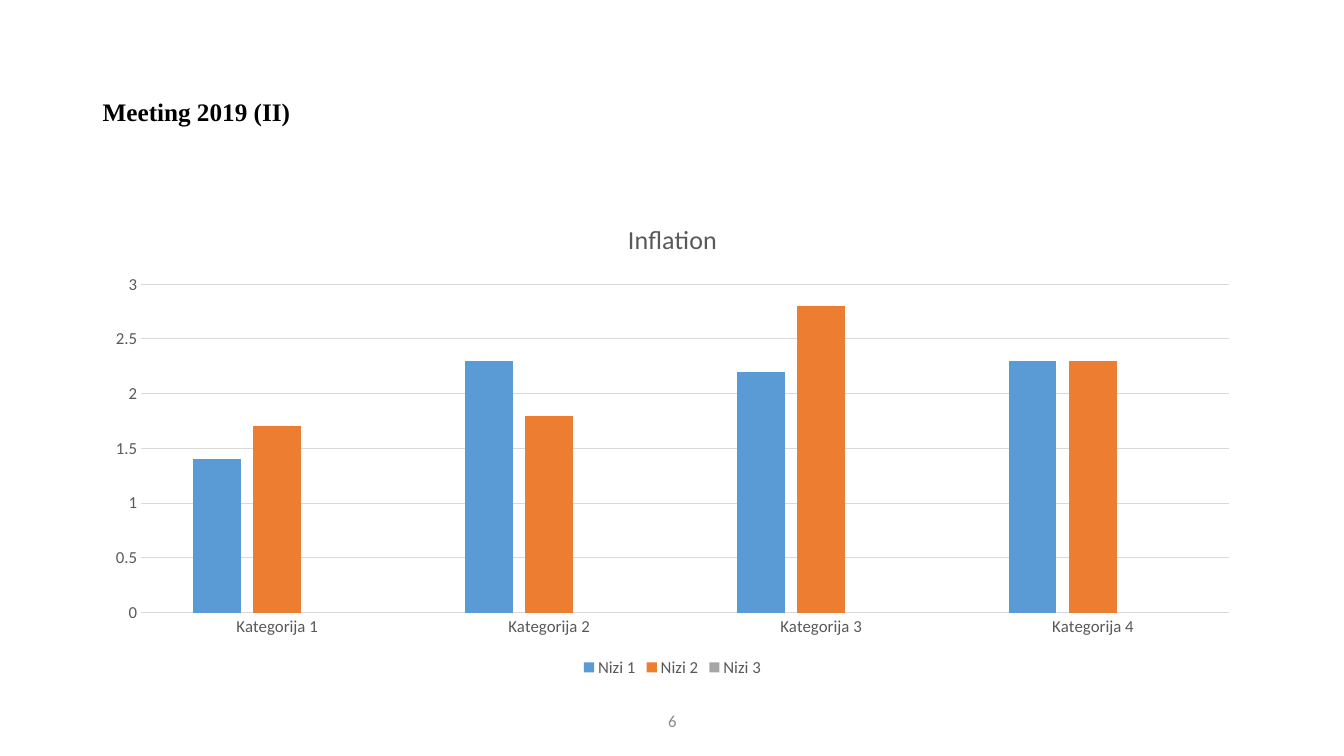
import dataclasses
import typing

import pptx
import pptx.chart.axis
import pptx.chart.data
import pptx.dml.color
import pptx.dml.line
import pptx.enum.chart
import pptx.enum.text
import pptx.slide
import pptx.text.text
import pptx.util

EMU_PER_PX = 9144
GREY = "595959"
RULE = "D9D9D9"


@dataclasses.dataclass(frozen=True)
class Label:
    text: str
    left: int
    top: int
    width: int
    height: int
    font: str
    size: int
    color: str
    bold: bool
    align: pptx.enum.text.PP_ALIGN
    line_spacing: float


@dataclasses.dataclass(frozen=True)
class Series:
    name: str
    values: tuple[typing.Optional[float], ...]
    color: str


LABELS = [
    Label("Meeting 2019 (II)", 92, 40, 1150, 145, "Times New Roman", 18,
          "000000", True, pptx.enum.text.PP_ALIGN.LEFT, 0.9),
    Label("6", 442, 695, 450, 40, "Calibri", 12,
          "8C8C8C", False, pptx.enum.text.PP_ALIGN.CENTER, 1.0),
]
CATEGORIES = [f"Kategorija {number}" for number in range(1, 5)]
SERIES = [
    Series("Nizi 1", (1.4, 2.3, 2.2, 2.3), "5B9BD5"),
    Series("Nizi 2", (1.7, 1.8, 2.8, 2.3), "ED7D31"),
    Series("Nizi 3", (None, None, None, None), "A5A5A5"),
]


def px(length: int) -> pptx.util.Emu:
    return pptx.util.Emu(length * EMU_PER_PX)


def rgb(color: str) -> pptx.dml.color.RGBColor:
    return pptx.dml.color.RGBColor.from_string(color)


def style_font(font: pptx.text.text.Font, name: str, size: float,
               color: str, bold: bool = False) -> None:
    font.name = name
    font.size = pptx.util.Pt(size)
    font.bold = bold
    font.color.rgb = rgb(color)


def style_line(line: pptx.dml.line.LineFormat) -> None:
    line.color.rgb = rgb(RULE)
    line.width = pptx.util.Pt(0.75)


def add_label(page: pptx.slide.Slide, label: Label) -> None:
    box = page.shapes.add_textbox(px(label.left), px(label.top),
                                  px(label.width), px(label.height))
    frame = box.text_frame
    frame.word_wrap = True
    frame.vertical_anchor = pptx.enum.text.MSO_ANCHOR.MIDDLE
    frame.text = label.text
    para = frame.paragraphs[0]
    para.alignment = label.align
    para.line_spacing = label.line_spacing
    style_font(para.runs[0].font, label.font, label.size, label.color, label.bold)


def add_inflation_chart(page: pptx.slide.Slide) -> None:
    data = pptx.chart.data.CategoryChartData()
    data.categories = CATEGORIES
    for series in SERIES:
        data.add_series(series.name, series.values)
    chart = page.shapes.add_chart(
        pptx.enum.chart.XL_CHART_TYPE.COLUMN_CLUSTERED,
        px(92), px(200), px(1150), px(476), data).chart
    style_font(chart.font, "Calibri", 10, "000000")

    chart.has_title = True
    title = chart.chart_title
    title.include_in_layout = False
    title.text_frame.text = "Inflation"
    style_font(title.text_frame.paragraphs[0].runs[0].font, "Calibri", 18.6, GREY)

    chart.has_legend = True
    chart.legend.position = pptx.enum.chart.XL_LEGEND_POSITION.BOTTOM
    chart.legend.include_in_layout = False
    style_font(chart.legend.font, "Calibri", 12, GREY)

    plot = chart.plots[0]
    plot.gap_width = 219
    plot.overlap = -27
    plot.vary_by_categories = False
    for drawn, series in zip(plot.series, SERIES):
        drawn.format.fill.solid()
        drawn.format.fill.fore_color.rgb = rgb(series.color)
        drawn.invert_if_negative = False

    for axis in (chart.category_axis, chart.value_axis):
        axis.major_tick_mark = pptx.enum.chart.XL_TICK_MARK.NONE
        axis.minor_tick_mark = pptx.enum.chart.XL_TICK_MARK.NONE
        style_font(axis.tick_labels.font, "Calibri", 12, GREY)
    style_line(chart.category_axis.format.line)

    scale = chart.value_axis
    scale.minimum_scale = 0
    scale.maximum_scale = 3
    scale.major_unit = 0.5
    scale.format.line.fill.background()
    scale.has_major_gridlines = True
    style_line(scale.major_gridlines.format.line)


def main() -> None:
    deck = pptx.Presentation()
    deck.slide_width = px(1333)
    deck.slide_height = px(750)
    page = deck.slides.add_slide(deck.slide_layouts[6])
    add_inflation_chart(page)
    for label in LABELS:
        add_label(page, label)
    deck.save("out.pptx")


if __name__ == "__main__":
    main()
